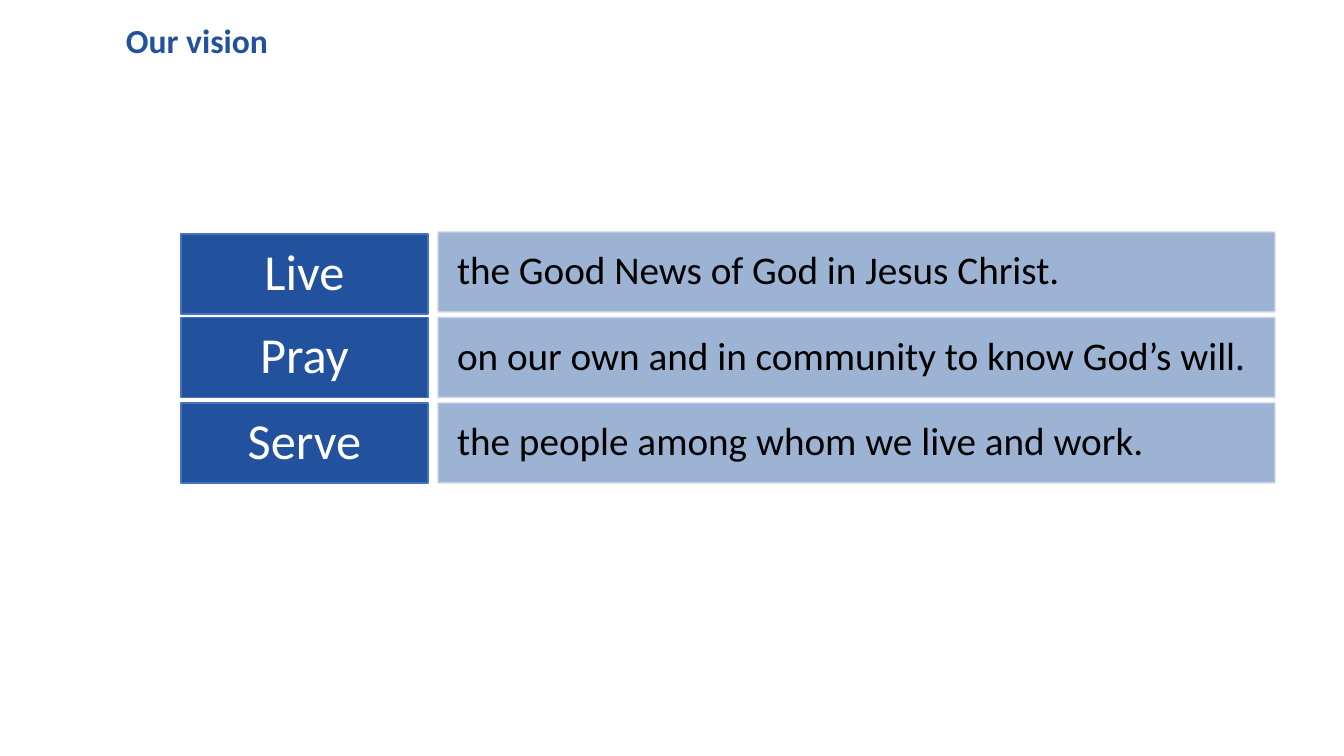
import dataclasses

import lxml.etree
import pptx
import pptx.dml.color
import pptx.enum.shapes
import pptx.enum.text
import pptx.oxml.ns
import pptx.util

PX = 914400 / 100.8


@dataclasses.dataclass(frozen=True)
class Theme:
    font: str = "Calibri"
    blue: str = "22529D"
    verb_line: str = "4472C4"
    aim_line: str = "CFD5EA"
    white: str = "FFFFFF"
    black: str = "000000"
    title_size: int = 24
    verb_size: int = 36
    aim_size: int = 28
    aim_opacity: int = 44
    line_opacity: int = 90
    line_width: int = 1


THEME = Theme()
VISION = [
    ("Live", "the Good News of God in Jesus Christ.", 2),
    ("Pray", "on our own and in community to know God’s will.", 0),
    ("Serve", "the people among whom we live and work.", 0),
]


def px(length):
    return pptx.util.Emu(round(length * PX))


def rgb(color):
    return pptx.dml.color.RGBColor.from_string(color)


def set_opacity(shape, fill_percent, line_percent):
    colors = shape.element.spPr.iter(pptx.oxml.ns.qn("a:srgbClr"))
    for color, percent in zip(colors, (fill_percent, line_percent)):
        alpha = lxml.etree.SubElement(color, pptx.oxml.ns.qn("a:alpha"))
        alpha.set("val", str(percent * 1000))


def add_words(paragraph, words, size, color, bold=False):
    run = paragraph.add_run()
    run.text = words
    run.font.name = THEME.font
    run.font.size = pptx.util.Pt(size)
    run.font.bold = bold
    run.font.color.rgb = rgb(color)


def add_bar(slide, box, words, size, color, line, insets, align):
    bar = slide.shapes.add_shape(
        pptx.enum.shapes.MSO_SHAPE.RECTANGLE, *map(px, box))
    bar.shadow.inherit = False
    bar.fill.solid()
    bar.fill.fore_color.rgb = rgb(THEME.blue)
    bar.line.color.rgb = rgb(line)
    bar.line.width = pptx.util.Pt(THEME.line_width)
    frame = bar.text_frame
    frame.word_wrap = True
    frame.vertical_anchor = pptx.enum.text.MSO_ANCHOR.MIDDLE
    frame.margin_left = frame.margin_right = px(insets[0])
    frame.margin_top = frame.margin_bottom = px(insets[1])
    paragraph = frame.paragraphs[0]
    paragraph.alignment = align
    paragraph.line_spacing = 0.9
    add_words(paragraph, words, size, color)
    return bar


def add_title(slide, box, words):
    title = slide.shapes.add_textbox(*map(px, box))
    title.text_frame.word_wrap = False
    title.text_frame.auto_size = pptx.enum.text.MSO_AUTO_SIZE.SHAPE_TO_FIT_TEXT
    add_words(title.text_frame.paragraphs[0], words,
              THEME.title_size, THEME.blue, True)


def add_vision(slide, box, rows):
    left, top, width, height = box
    bar_height, verb_width, gutter = 80, 247, 10
    pitch = (height - bar_height) / (len(rows) - 1)
    aim_offset = verb_width + gutter
    align = pptx.enum.text.PP_ALIGN
    for index, (verb, aim, verb_drop) in enumerate(rows):
        row_top = top + index * pitch
        add_bar(slide, (left, row_top + verb_drop, verb_width, bar_height),
                verb, THEME.verb_size, THEME.white, THEME.verb_line,
                (13, 8), align.CENTER)
        aim_bar = add_bar(
            slide,
            (left + aim_offset, row_top, width - aim_offset, bar_height),
            aim, THEME.aim_size, THEME.black, THEME.aim_line,
            (19, 20), align.LEFT)
        set_opacity(aim_bar, THEME.aim_opacity, THEME.line_opacity)


def main():
    deck = pptx.Presentation()
    deck.slide_width, deck.slide_height = px(1344), px(756)
    slide = deck.slides.add_slide(deck.slide_layouts[6])
    add_vision(slide, (181, 232, 1094, 251), VISION)
    add_title(slide, (116, 15, 164, 50), "Our vision")
    deck.save("out.pptx")


if __name__ == "__main__":
    main()
